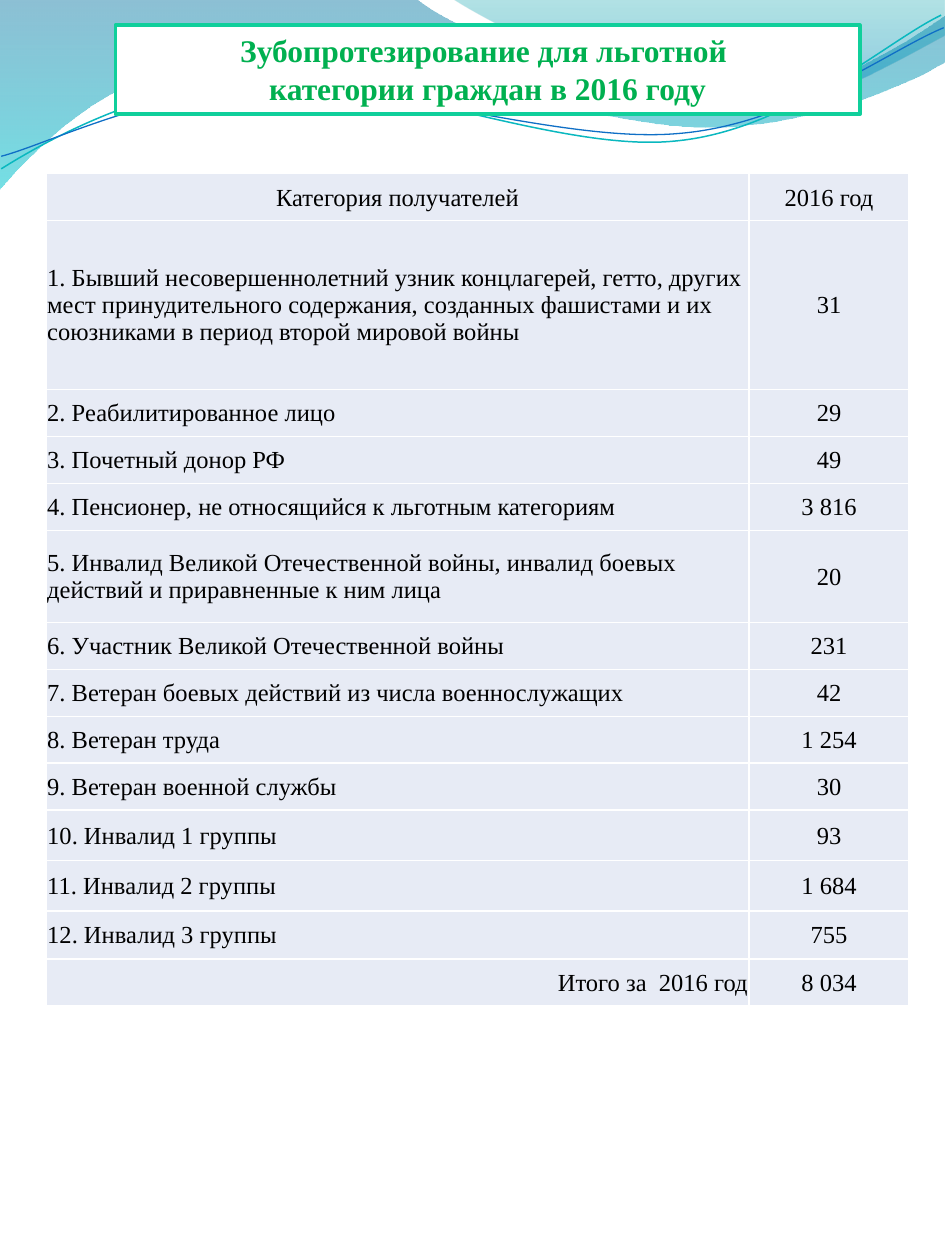
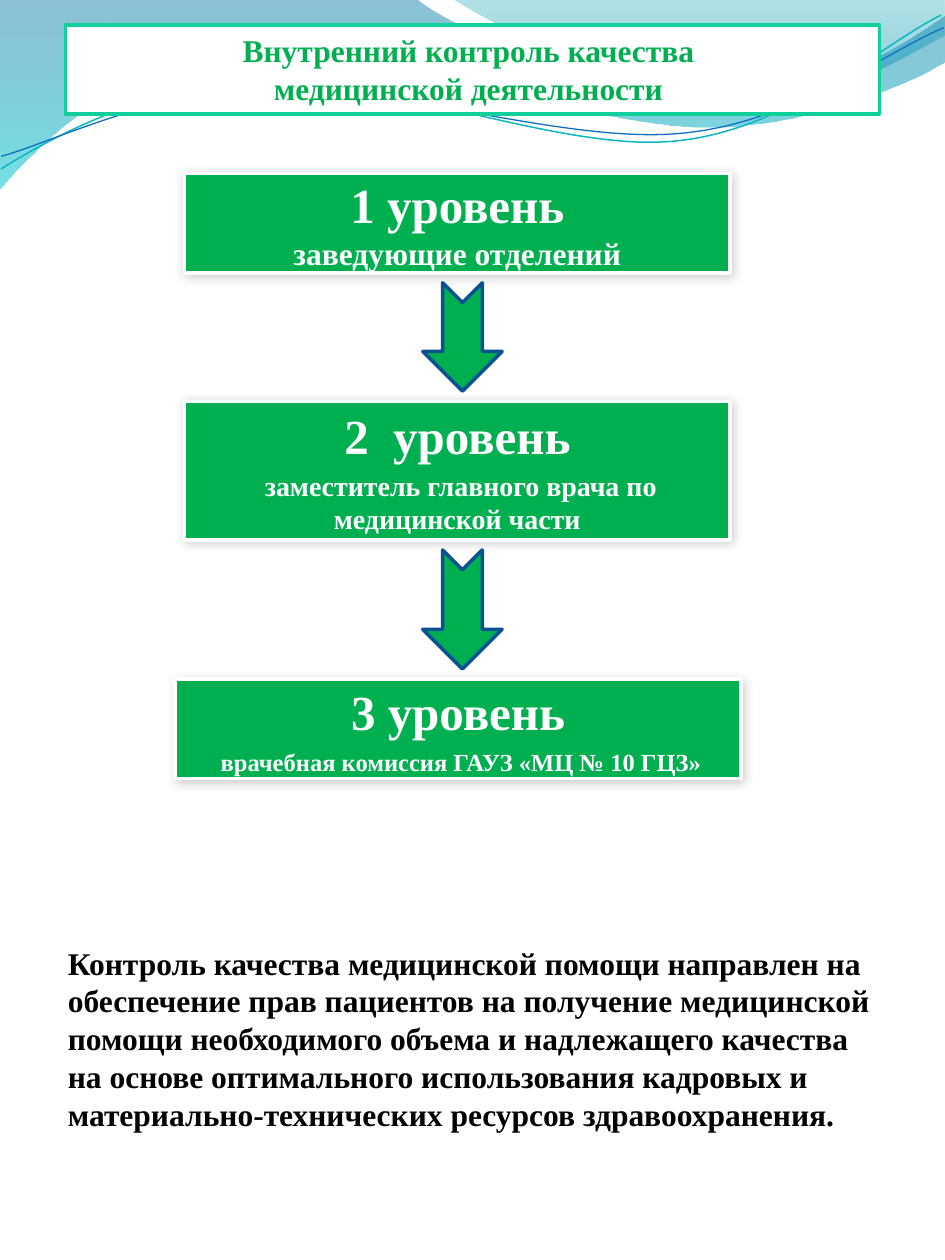
"""Build two portrait slides on dental prosthetics and quality control."""
from lxml import etree
from pptx import Presentation
from pptx import util as u
from pptx.dml.color import RGBColor
from pptx.enum import shapes, text
from pptx.oxml.ns import qn

WHITE = RGBColor(0xFF, 0xFF, 0xFF)
BLACK = RGBColor(0, 0, 0)
GREEN = RGBColor(0x00, 0xB0, 0x50)
MINT = RGBColor(0x10, 0xCF, 0x9B)
NAVY = RGBColor(0x0B, 0x52, 0x92)
PALE = RGBColor(0xE7, 0xEB, 0xF5)
TEAL = RGBColor(0x0A, 0xB8, 0xBF)
BLUE = RGBColor(0x0F, 0x6F, 0xC6)
DEEP_SEA = RGBColor(0x00, 0x74, 0xA1)
SEA = RGBColor(0x00, 0xC6, 0xCF)
LAGOON = RGBColor(0x00, 0xA1, 0xA9)
SKY = RGBColor(0x00, 0x8B, 0xBF)

FONT = "Times New Roman"
COLUMNS, ROWS = 75, 100
CELL = u.Inches(0.1)
CENTER, LEFT, RIGHT = text.PP_ALIGN.CENTER, text.PP_ALIGN.LEFT, text.PP_ALIGN.RIGHT

LEFT_WAVE = [
    [(0, -0.1)], [(33, -0.1)],
    [(35.7, 2.2), (49.8, 8.4), (56.9, 8.4)],
    [(64, 8.4), (71.9, 3.4), (75, 1.2)], [(75.1, 4.8)],
    [(73.8, 5.8), (65.2, 10.1), (55.9, 10.1)],
    [(46.6, 10), (28.6, 3.7), (19.3, 4.5)],
    [(9.7, 4.7), (3.4, 11.1), (-0.1, 15.1)],
]
RIGHT_WAVE = [
    [(35.9, -0.1)],
    [(38.2, 1.5), (51.1, 8.2), (57.7, 8.7)],
    [(64.2, 9.2), (72.1, 4.3), (75, 2.8)], [(75, 0)],
]
TEAL_LINE = [
    [(0.1, 13.4)],
    [(3.6, 11.2), (11.8, 6.6), (20.7, 6.3)],
    [(29.6, 5.9), (44.5, 12.1), (53.5, 11.2)],
    [(62.6, 10.4), (70.3, 3.3), (74.7, 1.2)],
]
BLUE_LINE = [
    [(0.1, 12.4)],
    [(3.6, 11.5), (12.2, 7.2), (21.2, 6.9)],
    [(30.2, 6.6), (44.9, 11.4), (53.8, 10.6)],
    [(62.8, 9.9), (70.5, 4), (74.9, 2.2)],
]

RECIPIENTS = [
    ("Категория получателей", "2016 год", 3.73),
    ("1. Бывший несовершеннолетний узник концлагерей, гетто, других мест "
     "принудительного содержания, созданных фашистами и их союзниками "
     "в период второй мировой войны", "31", 13.4),
    ("2. Реабилитированное лицо", "29", 3.73),
    ("3. Почетный донор РФ", "49", 3.73),
    ("4. Пенсионер, не относящийся к льготным категориям", "3 816", 3.73),
    ("5. Инвалид Великой Отечественной войны, инвалид боевых действий "
     "и приравненные к ним лица", "20", 7.3),
    ("6. Участник Великой Отечественной войны", "231", 3.73),
    ("7. Ветеран боевых действий из числа военнослужащих", "42", 3.73),
    ("8. Ветеран труда", "1 254", 3.73),
    ("9. Ветеран военной службы", "30", 3.73),
    ("10. Инвалид 1 группы", "93", 4),
    ("11. Инвалид 2 группы", "1 684", 4),
    ("12. Инвалид 3 группы", "755", 3.8),
    ("Итого за  2016 год", "8 034", 3.73),
]

LEVELS = [
    ((14.65, 13.75, 43.3, 7.9), "1 уровень", "заведующие отделений", 18, 0),
    ((14.65, 31.85, 43.3, 11), "2  уровень",
     " заместитель главного врача по медицинской части", 16, 2),
    ((13.9, 53.9, 44.9, 7.9), "3 уровень",
     " врачебная комиссия ГАУЗ «МЦ № 10 ГЦЗ»", 14, 4),
]

CONCLUSION = (
    "Контроль качества медицинской помощи направлен на обеспечение прав пациентов "
    "на получение медицинской помощи необходимого объема и надлежащего качества "
    "на основе оптимального использования кадровых и материально-технических "
    "ресурсов здравоохранения."
)


def grid(*cells):
    """Turn grid units into lengths."""
    return [u.Emu(round(c * CELL)) for c in cells]


def add_node(parent, tag, **attrs):
    """Append a DrawingML element."""
    return etree.SubElement(parent, qn(tag), {k: str(v) for k, v in attrs.items()})


def add_curve(slide, segments, close):
    """Draw an outline of straight and cubic segments without shadow."""
    first, *rest = [grid(*seg[-1]) for seg in segments]
    builder = slide.shapes.build_freeform(*first)
    builder.add_line_segments(rest, close=close)
    sp = builder.convert_to_shape()
    sp.shadow.inherit = False
    for line_to, seg in zip(list(sp.element.iter(qn("a:lnTo"))), segments[1:]):
        if len(seg) == 3:
            cubic = etree.Element(qn("a:cubicBezTo"))
            for x, y in (grid(*point) for point in seg):
                add_node(cubic, "a:pt", x=x - sp.left, y=y - sp.top)
            line_to.getparent().replace(line_to, cubic)
    return sp


def add_wave(slide, segments, stops):
    """Draw a translucent wave shaded from top to bottom."""
    sp = add_curve(slide, segments, True)
    sp.line.fill.background()
    sp.fill.gradient()
    sp.fill.gradient_angle = 270
    for stop, (position, color, _) in zip(sp.fill.gradient_stops, stops):
        stop.position = position
        stop.color.rgb = color
    clrs = sp.element.spPr.iter(qn("a:srgbClr"))
    for clr, (_, _, opacity) in zip(clrs, stops):
        add_node(clr, "a:alpha", val=opacity * 1000)
    return sp


def add_wave_line(slide, segments, color, width):
    """Draw a thin curved line."""
    sp = add_curve(slide, segments, False)
    sp.fill.background()
    sp.line.color.rgb = color
    sp.line.width = u.Pt(width)
    return sp


def decorate_layout(layout, slide):
    """Place the wave header on the layout shared by the slides."""
    header = [
        add_wave(slide, LEFT_WAVE, [(0, DEEP_SEA, 45), (1, SEA, 55)]),
        add_wave(slide, RIGHT_WAVE, [(0, LAGOON, 30), (0.8, SKY, 45)]),
        add_wave_line(slide, TEAL_LINE, TEAL, 0.85),
        add_wave_line(slide, BLUE_LINE, BLUE, 0.75),
    ]
    for sp in header:
        layout.shapes.element.append(sp.element)


def style(p, size, color, bold=True, align=CENTER):
    """Set the font and alignment of a paragraph."""
    p.alignment = align
    p.font.name, p.font.size = FONT, u.Pt(size)
    p.font.bold, p.font.color.rgb = bold, color


def add_block(slide, kind, box, fill, line):
    """Add a filled preset shape with a 2 pt outline."""
    sp = slide.shapes.add_shape(kind, *grid(*box))
    sp.shadow.inherit = False
    sp.fill.solid()
    sp.fill.fore_color.rgb = fill
    sp.line.color.rgb = line
    sp.line.width = u.Pt(2)
    return sp


def add_title(slide, left, width, lines):
    """Add the framed title."""
    sp = add_block(slide, shapes.MSO_SHAPE.RECTANGLE, (left, 2, width, 7.07), WHITE, MINT)
    tf = sp.text_frame
    tf.vertical_anchor = text.MSO_ANCHOR.TOP
    tf.text = "\n".join(lines)
    for p in tf.paragraphs:
        style(p, 18, GREEN)


def add_level(slide, box, name, owner, size, gap):
    """Add one control level with a soft shadow."""
    sp = add_block(slide, shapes.MSO_SHAPE.RECTANGLE, box, GREEN, WHITE)
    effects = sp.element.spPr.find(qn("a:effectLst"))
    shadow = add_node(effects, "a:outerShdw", blurRad=u.Pt(6), dist=u.Pt(1), dir=45 * 60000)
    add_node(add_node(shadow, "a:srgbClr", val=BLACK), "a:alpha", val=20000)
    tf = sp.text_frame
    tf.word_wrap = True
    tf.vertical_anchor = text.MSO_ANCHOR.MIDDLE
    tf.margin_left = tf.margin_right = tf.margin_top = tf.margin_bottom = u.Inches(0.24)
    tf.text = f"{name}\n{owner}"
    heading, detail = tf.paragraphs
    style(heading, 28, WHITE)
    style(detail, size, WHITE)
    detail.space_before = u.Pt(gap)


def add_down_arrow(slide, upper, lower, center=36.7, width=6.3, gap=0.8):
    """Fill the space between two levels with an arrow."""
    top, bottom = upper[1] + upper[3] + gap, lower[1] - gap
    length, middle = bottom - top, (top + bottom) / 2
    box = (center - length / 2, middle - width / 2, length, width)
    sp = add_block(slide, shapes.MSO_SHAPE.NOTCHED_RIGHT_ARROW, box, GREEN, NAVY)
    sp.rotation = 90


def set_cell(cell, value, align):
    """Fill a table cell and give it white borders."""
    cell.text = value
    cell.vertical_anchor = text.MSO_ANCHOR.MIDDLE
    cell.margin_left = cell.margin_right = cell.margin_top = u.Inches(0.01)
    cell.margin_bottom = 0
    style(cell.text_frame.paragraphs[0], 14, BLACK, False, align)
    cell.fill.solid()
    cell.fill.fore_color.rgb = PALE
    tc_pr = cell._tc.get_or_add_tcPr()
    for i, side in enumerate("LRTB"):
        ln = add_node(tc_pr, f"a:ln{side}", w=u.Pt(1))
        add_node(add_node(ln, "a:solidFill"), "a:srgbClr", val=WHITE)
        tc_pr.insert(i, ln)


def add_recipients(slide):
    """Add the table of recipients."""
    height = sum(row[2] for row in RECIPIENTS)
    frame = slide.shapes.add_table(len(RECIPIENTS), 2, *grid(3.65, 13.78, 68.5, height))
    table = frame.table
    table.first_row = table.horz_banding = False
    for column, width in zip(table.columns, grid(55.8, 12.7)):
        column.width = width
    aligns = [CENTER] + [LEFT] * (len(RECIPIENTS) - 2) + [RIGHT]
    for i, (category, count, row_height) in enumerate(RECIPIENTS):
        table.rows[i].height = grid(row_height)[0]
        set_cell(table.cell(i, 0), category, aligns[i])
        set_cell(table.cell(i, 1), count, CENTER)


def add_conclusion(slide):
    """Add the closing statement."""
    tf = slide.shapes.add_textbox(*grid(4.4, 74.4, 66.1, 16.2)).text_frame
    tf.word_wrap = True
    tf.text = CONCLUSION
    style(tf.paragraphs[0], 18, BLACK, align=LEFT)


def main():
    """Build and save the presentation."""
    prs = Presentation()
    prs.slide_width, prs.slide_height = grid(COLUMNS, ROWS)
    blank = prs.slide_layouts[6]

    slide = prs.slides.add_slide(blank)
    decorate_layout(blank, slide)
    add_title(slide, 9.15, 59.1,
              ["Зубопротезирование для льготной ", "категории граждан в 2016 году"])
    add_recipients(slide)

    slide = prs.slides.add_slide(blank)
    add_title(slide, 5.2, 64.6,
              ["Внутренний контроль качества ", "медицинской деятельности "])
    for level in LEVELS:
        add_level(slide, *level)
    for upper, lower in zip(LEVELS, LEVELS[1:]):
        add_down_arrow(slide, upper[0], lower[0])
    add_conclusion(slide)

    prs.save("out.pptx")


if __name__ == "__main__":
    main()
